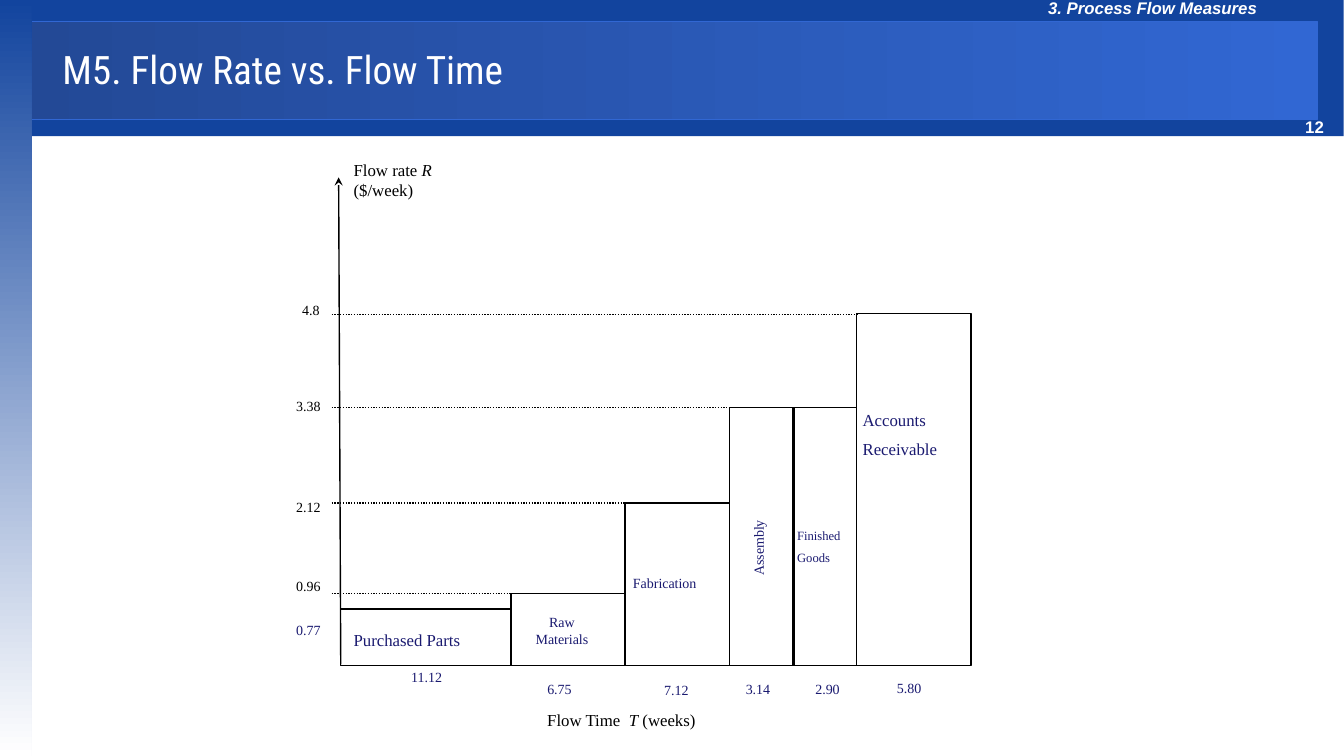
from dataclasses import dataclass
from typing import Optional

from lxml import etree
from pptx import Presentation
from pptx import util as u
from pptx.dml.color import RGBColor
from pptx.enum import dml, shapes, text
from pptx.oxml import ns

COLORS = {
    "band": "12449E",
    "panel": "3167D3",
    "white": "FFFFFF",
    "ink": "000000",
    "navy": "1A1A70",
}
SERIF = "Times New Roman"
BASELINE = 475.2
TICK_LEFT = 236.9


@dataclass
class Band:
    left: float
    top: float
    width: float
    height: float
    color: str
    fade_to: Optional[str] = None
    angle: int = 0
    shade: Optional[int] = None
    outline: Optional[str] = None


@dataclass
class Stage:
    left: float
    right: float
    top: float


@dataclass
class Rule:
    start: tuple[float, float]
    end: tuple[float, float]
    dotted: bool = False
    arrow: bool = False


@dataclass
class Label:
    left: float
    top: float
    width: float
    height: float
    lines: tuple[str, ...]
    size: float = 10
    color: str = "navy"
    font: str = SERIF
    bold: bool = False
    italic: bool = False
    wrap: bool = False
    centered: bool = False
    gap: float = 0
    rotation: float = 0


BANDS = [
    Band(18.7, 0, 941.1, 97.2, "band"),
    Band(18.7, 15.1, 922.3, 70.6, "panel", "panel", 0, 46275, "panel"),
    Band(0, 0, 22.6, 540, "band", "white", 270),
]

STAGES = [
    Stage(365, 446.4, 424.1),
    Stage(446.4, 521.3, 359.3),
    Stage(521.3, 567.2, 290.9),
    Stage(566.6, 612, 290.9),
    Stage(612, 693.6, 223.9),
    Stage(243.4, 365, 434.9),
]

RULES = [
    Rule((241.9, 126.7), (243.4, 474.5), arrow=True),
    Rule((243.4, BASELINE), (690.5, BASELINE)),
] + [
    Rule((TICK_LEFT, level), (end, level), dotted=True)
    for level, end in [(424.1, 381.6), (359.3, 450.7), (290.9, 579.6), (224.6, 612.7)]
]

HEADERS = [
    Label(925.2, 79.9, 29.5, 21.6, ("12",), 12, "white", "Arial", bold=True),
    Label(741.6, -5, 165.6, 21.6, ("3. Process Flow Measures",), 12, "white", "Arial",
          bold=True, italic=True),
]

AXIS_TITLES = [
    Label(245.5, 110.2, 71.3, 36.7, ("Flow rate _R_", "($/week)"), 12, "ink"),
    Label(383.8, 503.3, 161.3, 21.6, ("Flow Time _ T_ (weeks)",), 12, "ink", wrap=True),
]

STAGE_NAMES = [
    Label(609.1, 289.4, 97.9, 43.9, ("Accounts", "Receivable"), 12, wrap=True, gap=6),
    Label(562.3, 373.7, 64.8, 34.6, ("Finished", "Goods"), 9, wrap=True, gap=4.5),
    Label(502.6, 369.4, 78.5, 19.4, ("Assembly",), wrap=True, rotation=270),
    Label(445, 406.8, 79.9, 19.4, ("Fabrication",), wrap=True),
    Label(375.1, 434.9, 52.6, 31.7, ("Raw", "Materials"), centered=True),
    Label(245.5, 446.4, 91.4, 21.6, ("Purchased Parts",), 12),
]

RATES = [
    Label(left, top, 236.5 - left, 19.4, (rate,), color=color)
    for rate, left, top, color in [
        ("0.96", 204.5, 409, "ink"),
        ("0.77", 204.5, 440.6, "navy"),
        ("2.12", 204.5, 352.8, "ink"),
        ("3.38", 204.5, 280.1, "ink"),
        ("4.8", 208.8, 211.7, "ink"),
    ]
]

TIMES = [
    Label(left, top, width, 19.4, (weeks,))
    for weeks, left, top, width in [
        ("11.12", 286.6, 473.8, 36.7),
        ("6.75", 383.8, 482.4, 32),
        ("7.12", 467.3, 483.1, 32),
        ("3.14", 525.6, 482.4, 32),
        ("2.90", 575.3, 482.4, 32),
        ("5.80", 633.6, 481.7, 32),
    ]
]


def rgb(name: str) -> RGBColor:
    return RGBColor.from_string(COLORS[name])


def format_font(font, color: str, **values) -> None:
    for name, value in values.items():
        setattr(font, name, value)
    font.color.rgb = rgb(color)


def add_rectangle(slide, left: float, top: float, width: float, height: float):
    rectangle = slide.shapes.add_shape(
        shapes.MSO_SHAPE.RECTANGLE, u.Pt(left), u.Pt(top), u.Pt(width), u.Pt(height))
    rectangle.shadow.inherit = False
    return rectangle


def draw_band(slide, band: Band) -> None:
    strip = add_rectangle(slide, band.left, band.top, band.width, band.height)
    if band.fade_to:
        strip.fill.gradient()
        strip.fill.gradient_angle = band.angle
        for stop, color in zip(strip.fill.gradient_stops, (band.color, band.fade_to)):
            stop.color.rgb = rgb(color)
        if band.shade:
            first_color = strip._element.find(".//" + ns.qn("a:srgbClr"))
            etree.SubElement(first_color, ns.qn("a:shade"), val=str(band.shade))
    else:
        strip.fill.solid()
        strip.fill.fore_color.rgb = rgb(band.color)
    if band.outline:
        strip.line.color.rgb = rgb(band.outline)
        strip.line.width = u.Pt(0.75)
    else:
        strip.line.fill.background()


def draw_stage(slide, stage: Stage) -> None:
    column = add_rectangle(
        slide, stage.left, stage.top, stage.right - stage.left, BASELINE - stage.top)
    column.fill.background()
    column.line.color.rgb = rgb("ink")
    column.line.width = u.Pt(1)


def draw_rule(slide, rule: Rule) -> None:
    ends = [u.Pt(value) for value in (*rule.start, *rule.end)]
    stroke = slide.shapes.add_connector(shapes.MSO_CONNECTOR.STRAIGHT, *ends)
    stroke.line.color.rgb = rgb("ink")
    stroke.line.width = u.Pt(1)
    if rule.dotted:
        stroke.line.dash_style = dml.MSO_LINE.ROUND_DOT
    if rule.arrow:
        etree.SubElement(stroke.line._get_or_add_ln(), ns.qn("a:headEnd"), type="stealth")
    etree.SubElement(stroke._element.spPr, ns.qn("a:effectLst"))


def draw_label(slide, label: Label) -> None:
    box = slide.shapes.add_textbox(
        u.Pt(label.left), u.Pt(label.top), u.Pt(label.width), u.Pt(label.height))
    box.rotation = label.rotation
    frame = box.text_frame
    frame.word_wrap = label.wrap
    frame.auto_size = text.MSO_AUTO_SIZE.SHAPE_TO_FIT_TEXT
    for row, line in enumerate(label.lines):
        paragraph = frame.add_paragraph() if row else frame.paragraphs[0]
        paragraph.alignment = text.PP_ALIGN.CENTER if label.centered else text.PP_ALIGN.LEFT
        if row and label.gap:
            paragraph.space_before = u.Pt(label.gap)
        for part, words in enumerate(line.split("_")):
            if words:
                run = paragraph.add_run()
                run.text = words
                format_font(run.font, label.color, name=label.font, size=u.Pt(label.size),
                            bold=label.bold, italic=label.italic or part % 2 == 1)


def draw_title(slide, words: str) -> None:
    title = slide.shapes.title
    title.left, title.top, title.width, title.height = map(u.Pt, (37.4, 15.1, 892.1, 67.7))
    frame = title.text_frame
    frame.text = words
    frame.vertical_anchor = text.MSO_ANCHOR.MIDDLE
    frame.auto_size = text.MSO_AUTO_SIZE.NONE
    frame.paragraphs[0].alignment = text.PP_ALIGN.LEFT
    format_font(frame.paragraphs[0].runs[0].font, "white", name="Roboto Condensed", size=u.Pt(28))
    slide.shapes._spTree.append(title._element)


def main() -> None:
    deck = Presentation()
    deck.slide_width, deck.slide_height = u.Pt(960), u.Pt(540)
    slide = deck.slides.add_slide(deck.slide_layouts[5])
    for draw, items in (
        (draw_band, BANDS),
        (draw_label, HEADERS),
        (draw_rule, RULES),
        (draw_stage, STAGES),
        (draw_label, AXIS_TITLES + STAGE_NAMES + RATES + TIMES),
    ):
        for item in items:
            draw(slide, item)
    draw_title(slide, "M5. Flow Rate vs. Flow Time")
    deck.save("out.pptx")


if __name__ == "__main__":
    main()
